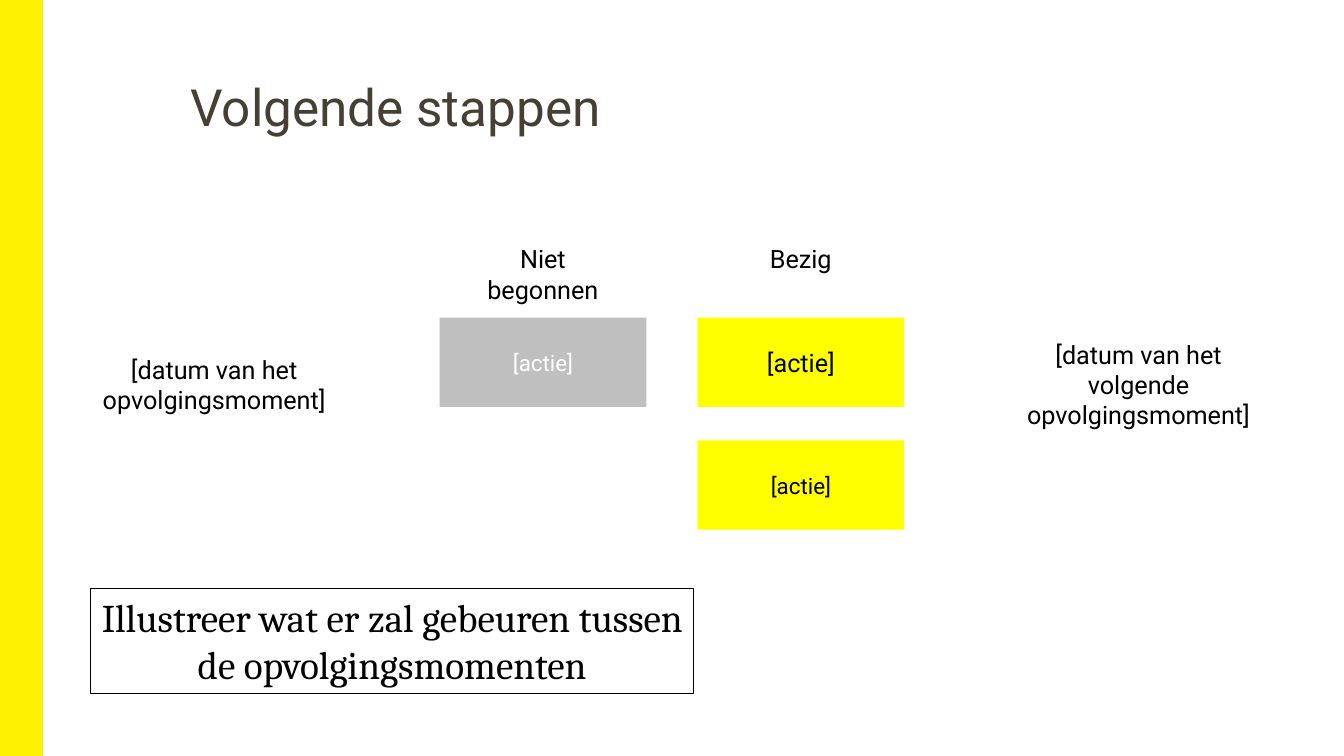
import pptx
import pptx.dml.color
import pptx.enum.shapes
import pptx.enum.text
import pptx.util

Pt = pptx.util.Pt
RGB = pptx.dml.color.RGBColor
ANCHOR = pptx.enum.text.MSO_ANCHOR
CENTER = pptx.enum.text.PP_ALIGN.CENTER
RECT = pptx.enum.shapes.MSO_SHAPE.RECTANGLE

BAR_YELLOW = RGB(0xFF, 0xF2, 0x00)
YELLOW = RGB(0xFF, 0xFF, 0x00)
GREY = RGB(0xBF, 0xBF, 0xBF)
TITLE_BROWN = RGB(0x46, 0x40, 0x34)
BLACK = RGB(0, 0, 0)
WHITE = RGB(0xFF, 0xFF, 0xFF)

prs = pptx.Presentation()
prs.slide_width, prs.slide_height = Pt(960), Pt(540)
s = prs.slides.add_slide(prs.slide_layouts[5])


def add_rect(left, top, width, height, fill=None, line=None, line_width=1):
    sp = s.shapes.add_shape(RECT, Pt(left), Pt(top), Pt(width), Pt(height))
    sp.shadow.inherit = False
    if fill is None:
        sp.fill.background()
    else:
        sp.fill.solid()
        sp.fill.fore_color.rgb = fill
    if line is None:
        sp.line.fill.background()
    else:
        sp.line.color.rgb = line
        sp.line.width = Pt(line_width)
    return sp


def write(sp, text, size, color=BLACK, font="Roboto", anchor=ANCHOR.MIDDLE, align=CENTER):
    tf = sp.text_frame
    tf.text = text
    tf.word_wrap = True
    tf.vertical_anchor = anchor
    p = tf.paragraphs[0]
    p.alignment = align
    r = p.runs[0]
    r.font.size = Pt(size)
    r.font.name = font
    r.font.color.rgb = color
    return tf


# Side bar
add_rect(0, 0, 30.24, 540, BAR_YELLOW, BAR_YELLOW)

# Title
title = s.shapes.title
title.left, title.top, title.width, title.height = Pt(136.1), Pt(59.8), Pt(778.3), Pt(87.8)
tf = write(title, "Volgende stappen", 36.6, TITLE_BROWN,
           anchor=ANCHOR.TOP, align=pptx.enum.text.PP_ALIGN.LEFT)
tf.auto_size = pptx.enum.text.MSO_AUTO_SIZE.NONE
tf.margin_left = tf.margin_top = tf.margin_right = tf.margin_bottom = 0
tf.paragraphs[0].line_spacing = Pt(38)

# Status columns: heading, fill, text colour, text size of each action
columns = [
    ("Niet begonnen", GREY, WHITE, [16]),
    ("Bezig", YELLOW, BLACK, [18, 16]),
]
for col, (heading, fill, color, sizes) in enumerate(columns):
    left = 314.1 + 184.2 * col
    sp = s.shapes.add_textbox(Pt(left + 10), Pt(170.6), Pt(127.4), Pt(29))
    write(sp, heading, 18, anchor=ANCHOR.TOP)
    for row, size in enumerate(sizes):
        sp = add_rect(left, 226.8 + 87.8 * row, 147.6, 63.8, fill)
        write(sp, "[actie]", size, color)

# Follow-up dates on either side
for text, left, top, width, height in [
    ("[datum van het opvolgingsmoment]", 64.8, 249.1, 176.4, 51),
    ("[datum van het volgende opvolgingsmoment]", 712.1, 238.3, 202.3, 72.7),
]:
    sp = s.shapes.add_textbox(Pt(left), Pt(top), Pt(width), Pt(height))
    write(sp, text, 18)

# Instruction box
sp = add_rect(64.8, 420.5, 430.6, 74.9, line=BLACK, line_width=0.75)
write(sp, "Illustreer wat er zal gebeuren tussen de opvolgingsmomenten", 28,
      font="Cambria", anchor=ANCHOR.TOP)

prs.save("out.pptx")
